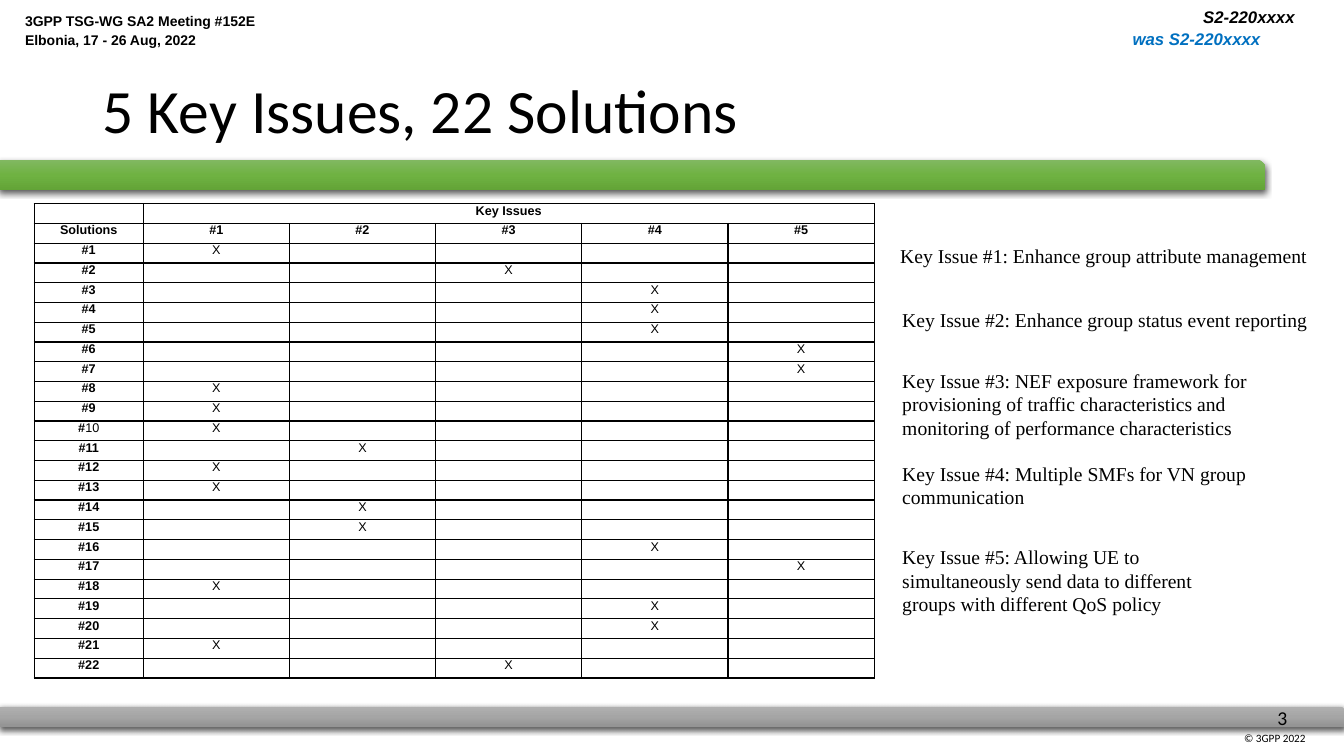
from pptx import Presentation
from pptx.dml.color import RGBColor
from pptx.enum.shapes import MSO_SHAPE
from pptx.enum.text import MSO_ANCHOR, MSO_AUTO_SIZE, PP_ALIGN
from pptx.oxml import parse_xml
from pptx.oxml.ns import nsdecls
from pptx.util import Inches, Pt

COLORS = {"text": "000000", "revision": "0070C0", "border": "000000", "shadow": "000000"}
BARS = [
    ((0, 7.01, 13.34, 0.2), ("AFAFAF", "A5A5A5", "939393")),
    ((-0.01, 1.59, 12.56, 0.3), ("81B861", "6FB242", "62A336")),
]

prs = Presentation()
prs.slide_width, prs.slide_height = Inches(13.33), Inches(7.5)
slide = prs.slides.add_slide(prs.slide_layouts[5])


def write(p, text, color="text", **font):
    r = p.add_run()
    r.text = text
    r.font.color.rgb = RGBColor.from_string(COLORS[color])
    for name, value in font.items():
        setattr(r.font, name, value)


def add_box(left, top, width, height, lines, wrap=True, **font):
    tf = slide.shapes.add_textbox(Inches(left), Inches(top), Inches(width), Inches(height)).text_frame
    tf.word_wrap = wrap
    for i, line in enumerate(lines):
        p = tf.paragraphs[0] if i == 0 else tf.add_paragraph()
        write(p, line, **font)
    return tf


# Gradient bars
for box, shades in BARS:
    s = slide.shapes.add_shape(MSO_SHAPE.SNIP_1_RECTANGLE, *[Inches(v) for v in box])
    s.line.fill.background()
    spPr = s._element.spPr
    stops = "".join(f'<a:gs pos="{i * 50000}"><a:srgbClr val="{c}"/></a:gs>' for i, c in enumerate(shades))
    spPr.insert(2, parse_xml(
        f'<a:gradFill {nsdecls("a")}><a:gsLst>{stops}</a:gsLst><a:lin ang="5400000" scaled="0"/></a:gradFill>'))
    spPr.append(parse_xml(
        f'<a:effectLst {nsdecls("a")}><a:outerShdw blurRad="57150" dist="19050" dir="5400000" '
        f'algn="ctr" rotWithShape="0"><a:srgbClr val="{COLORS["shadow"]}"><a:alpha val="63000"/></a:srgbClr>'
        '</a:outerShdw></a:effectLst>'))

# Footer
add_box(12.24, 7.21, 1.08, 0.23, ["© 3GPP 2022"], name="Calibri", size=Pt(8))
add_box(12.57, 6.95, 0.43, 0.34, ["3"], wrap=False, name="Calibri", size=Pt(14))

# Meeting header
tf = add_box(0.15, 0.04, 2.85, 0.64, ["3GPP TSG-WG SA2 Meeting #152E", "Elbonia, 17 - 26 Aug, 2022"],
             name="Arial", size=Pt(10), bold=True)
tf.margin_top = Inches(0.08)
tf.paragraphs[1].space_before = Pt(1.5)

# Document number, with the earlier number indented from the right
tf = add_box(10.14, 0.01, 2.84, 0.71, ["S2-220xxxx", "was S2-220xxxx"],
             name="Arial", size=Pt(12), bold=True, italic=True)
tf.margin_top = Inches(0.06)
for p, indent in zip(tf.paragraphs, (0.04, 0.38)):
    p.alignment = PP_ALIGN.RIGHT
    p._p.get_or_add_pPr().set("marR", str(Inches(indent)))
previous = tf.paragraphs[1]
previous.space_before = Pt(1)
previous.runs[0].font.color.rgb = RGBColor.from_string(COLORS["revision"])

# Title
title = slide.shapes.title
title.left, title.top, title.width, title.height = [Inches(v) for v in (0.92, 0.4, 11.5, 1.45)]
tf = title.text_frame
tf.word_wrap = True
tf.auto_size = MSO_AUTO_SIZE.NONE
tf.vertical_anchor = MSO_ANCHOR.MIDDLE
p = tf.paragraphs[0]
p.alignment = PP_ALIGN.LEFT
p.line_spacing = 0.9
write(p, "5 Key Issues, 22 Solutions", name="Calibri", size=Pt(44))

# Key issue addressed by each solution, in order
ISSUE_OF_SOLUTION = [1, 3, 4, 4, 4, 5, 5, 1, 1, 1, 2, 1, 1, 2, 2, 4, 5, 1, 4, 4, 1, 3]
ISSUES = range(1, 6)
rows = [["", "Key Issues", "", "", "", ""], ["Solutions"] + [f"#{i}" for i in ISSUES]]
for number, issue in enumerate(ISSUE_OF_SOLUTION, 1):
    rows.append([f"#{number}"] + ["X" if i == issue else "" for i in ISSUES])

# Solutions table
table = slide.shapes.add_table(len(rows), 6, Inches(0.34), Inches(2.02), Inches(8.33), Inches(4.71)).table
table.first_row = table.horz_banding = False
for c, column in enumerate(table.columns):
    column.width = Inches(1.45 if c else 1.08)
for r, values in enumerate(rows):
    table.rows[r].height = Inches(4.71 / len(rows))
    for c, value in enumerate(values):
        cell = table.cell(r, c)
        cell.margin_left = cell.margin_right = Inches(0.07)
        cell.margin_top = cell.margin_bottom = 0
        for side in "LRTB":
            cell._tc.get_or_add_tcPr().append(parse_xml(
                f'<a:ln{side} {nsdecls("a")} w="12700"><a:solidFill><a:srgbClr val="{COLORS["border"]}"/>'
                f'</a:solidFill></a:ln{side}>'))
        cell.fill.background()
        p = cell.text_frame.paragraphs[0]
        p.alignment = PP_ALIGN.CENTER
        if value == "#10":
            write(p, "#", name="Arial", size=Pt(9), bold=True)
            write(p, "10", name="Arial", size=Pt(9), bold=False)
        elif value:
            write(p, value, name="Arial", size=Pt(9), bold=value != "X")
        else:
            p._p.append(parse_xml(f'<a:endParaRPr {nsdecls("a")} sz="900"/>'))
table.cell(0, 1).merge(table.cell(0, 5))

# Key issue descriptions
DESCRIPTIONS = [
    (8.83, 2.37, 4.27, 0.34, "Enhance group attribute management", False),
    (8.85, 3.01, 4.26, 0.34, "Enhance group status event reporting", False),
    (8.85, 3.61, 4.02, 0.81, "NEF exposure framework for provisioning of traffic characteristics "
                             "and monitoring of performance characteristics", True),
    (8.85, 4.53, 4.12, 0.57, "Multiple SMFs for VN group communication", True),
    (8.85, 5.36, 3.38, 0.81, "Allowing UE to simultaneously send data to different groups "
                             "with different QoS policy", True),
]
for number, (left, top, width, height, text, wrap) in enumerate(DESCRIPTIONS, 1):
    add_box(left, top, width, height, [f"Key Issue #{number}: {text}"], wrap,
            name="Times New Roman", size=Pt(14))

prs.save("out.pptx")
